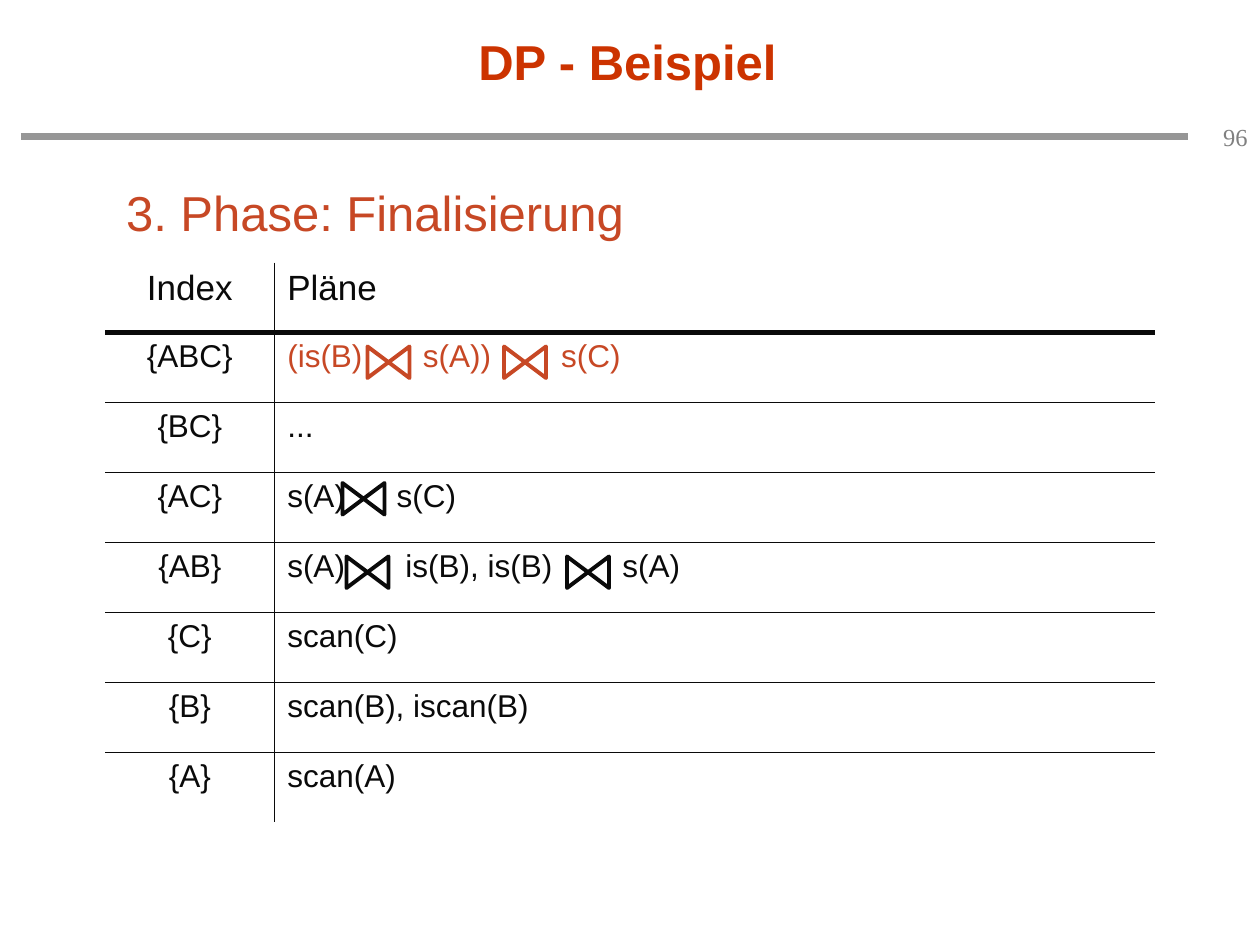
from dataclasses import dataclass

from lxml import etree
from pptx import Presentation
from pptx import util as u
from pptx.dml.color import RGBColor
from pptx.enum import shapes, text
from pptx.oxml.ns import qn

Pt = u.Pt


@dataclass(frozen=True)
class Theme:
    title: str = "CC3300"
    accent: str = "C74825"
    ink: str = "0A0A0A"
    rule: str = "969696"
    number: str = "808080"
    sans: str = "Arial"
    serif: str = "Times New Roman"
    heading_size: float = 28
    header_size: float = 20
    cell_size: float = 18
    number_size: float = 14


@dataclass(frozen=True)
class PlanRow:
    index: str
    plans: str
    tabs: tuple[float, ...] = ()   # text stops after each join sign
    joins: tuple[float, ...] = ()  # left edges of the join signs
    join_drop: float = 5           # join sign below the row's top
    color: str = Theme.ink
    size: float = Theme.cell_size


THEME = Theme()
ROWS = [
    PlanRow("Index", "Pläne", size=THEME.header_size),
    PlanRow("{ABC}", "(is(B)\ts(A))\ts(C)", (77.5, 156.5), (213, 291), color=THEME.accent),
    PlanRow("{BC}", "..."),
    PlanRow("{AC}", "s(A)\ts(C)", (62.5,), (198.7,), join_drop=3),
    PlanRow("{AB}", "s(A)\tis(B), is(B)\ts(A)", (67.5, 191.5), (201, 327)),
    PlanRow("{C}", "scan(C)"),
    PlanRow("{B}", "scan(B), iscan(B)"),
    PlanRow("{A}", "scan(A)"),
]
TABLE_LEFT, TABLE_TOP, ROW_HEIGHT = 60, 150, 40
COLUMN_WIDTHS = (97, 503)
JOIN_WIDTH, JOIN_HEIGHT = 18, 24


def write(frame, words: str, size: float, color: str, face: str = THEME.sans,
          align=text.PP_ALIGN.LEFT, bold: bool = False):
    """Fill a text frame with one formatted paragraph."""
    paragraph = frame.paragraphs[0]
    paragraph.text = words
    paragraph.alignment = align
    font = paragraph.font
    font.name, font.size, font.bold = face, Pt(size), bold
    font.color.rgb = RGBColor.from_string(color)
    return paragraph


def set_tabs(paragraph, stops: tuple[float, ...]) -> None:
    properties = paragraph._p.get_or_add_pPr()
    tab_list = etree.Element(qn("a:tabLst"))
    for stop in stops:
        etree.SubElement(tab_list, qn("a:tab"), pos=str(int(Pt(stop))), algn="l")
    properties.find(qn("a:defRPr")).addprevious(tab_list)


def set_borders(cell, widths: dict[str, float]) -> None:
    """Draw the sides with a width above zero and clear the others."""
    properties = cell._tc.get_or_add_tcPr()
    for side in "LRTB":
        width = widths.get(side, 0)
        line = etree.SubElement(properties, qn(f"a:ln{side}"), w=str(int(Pt(width))))
        if width:
            fill = etree.SubElement(line, qn("a:solidFill"))
            etree.SubElement(fill, qn("a:srgbClr"), val=THEME.ink)
        else:
            etree.SubElement(line, qn("a:noFill"))


def add_plan_table(slide, rows: list[PlanRow]) -> None:
    table = slide.shapes.add_table(
        len(rows), len(COLUMN_WIDTHS), Pt(TABLE_LEFT), Pt(TABLE_TOP),
        Pt(sum(COLUMN_WIDTHS)), Pt(ROW_HEIGHT * len(rows))).table
    table.first_row = table.horz_banding = False
    for column, width in zip(table.columns, COLUMN_WIDTHS):
        column.width = Pt(width)

    # Horizontal line widths: none outside, heavy below the header
    lines = [0, 3] + [1] * (len(rows) - 2) + [0]
    for number, row in enumerate(rows):
        index_cell, plan_cell = table.cell(number, 0), table.cell(number, 1)
        write(index_cell.text_frame, row.index, row.size, THEME.ink,
              align=text.PP_ALIGN.CENTER)
        plans = write(plan_cell.text_frame, row.plans, row.size, row.color)
        if row.tabs:
            set_tabs(plans, row.tabs)
        for cell, inner_side in ((index_cell, "R"), (plan_cell, "L")):
            set_borders(cell, {inner_side: 1, "T": lines[number], "B": lines[number + 1]})
            cell.fill.background()


def add_join(slide, left: float, top: float, color: str) -> None:
    join = slide.shapes.add_shape(shapes.MSO_SHAPE.FLOWCHART_COLLATE,
                                  Pt(left), Pt(top), Pt(JOIN_WIDTH), Pt(JOIN_HEIGHT))
    join.rotation = 90
    join.shadow.inherit = False
    join.fill.background()
    join.line.color.rgb = RGBColor.from_string(color)
    join.line.width = Pt(2.25)


def add_header(slide) -> None:
    # Page number
    number = slide.shapes.add_textbox(Pt(672), Pt(66), Pt(48), Pt(24)).text_frame
    number.word_wrap = True
    number.vertical_anchor = text.MSO_ANCHOR.MIDDLE
    write(number, "96", THEME.number_size, THEME.number, THEME.serif, text.PP_ALIGN.RIGHT)

    # Rule below the title
    rule = slide.shapes.add_connector(shapes.MSO_CONNECTOR.STRAIGHT,
                                      Pt(12), Pt(78), Pt(679), Pt(78))
    rule.line.color.rgb = RGBColor.from_string(THEME.rule)
    rule.line.width = Pt(4.5)
    etree.SubElement(rule._element.spPr, qn("a:effectLst"))

    # Title
    title = slide.shapes.title
    title.left, title.top, title.width, title.height = Pt(18), Pt(0), Pt(681), Pt(55)
    title.text_frame.auto_size = text.MSO_AUTO_SIZE.NONE
    title.text_frame.vertical_anchor = text.MSO_ANCHOR.BOTTOM
    write(title.text_frame, "DP - Beispiel", THEME.heading_size, THEME.title,
          align=text.PP_ALIGN.CENTER, bold=True)


def main() -> None:
    deck = Presentation()
    deck.slide_width, deck.slide_height = Pt(720), Pt(540)
    slide = deck.slides.add_slide(deck.slide_layouts[5])
    add_header(slide)
    add_plan_table(slide, ROWS)

    # Phase heading
    phase = slide.shapes.add_textbox(Pt(65), Pt(101), Pt(299.5), Pt(41)).text_frame
    phase.word_wrap = False
    write(phase, "3. Phase: Finalisierung", THEME.heading_size, THEME.accent)

    # Join signs in the gaps of the plans
    for number, row in enumerate(ROWS):
        for left in row.joins:
            add_join(slide, left, TABLE_TOP + number * ROW_HEIGHT + row.join_drop, row.color)

    deck.save("out.pptx")


if __name__ == "__main__":
    main()
